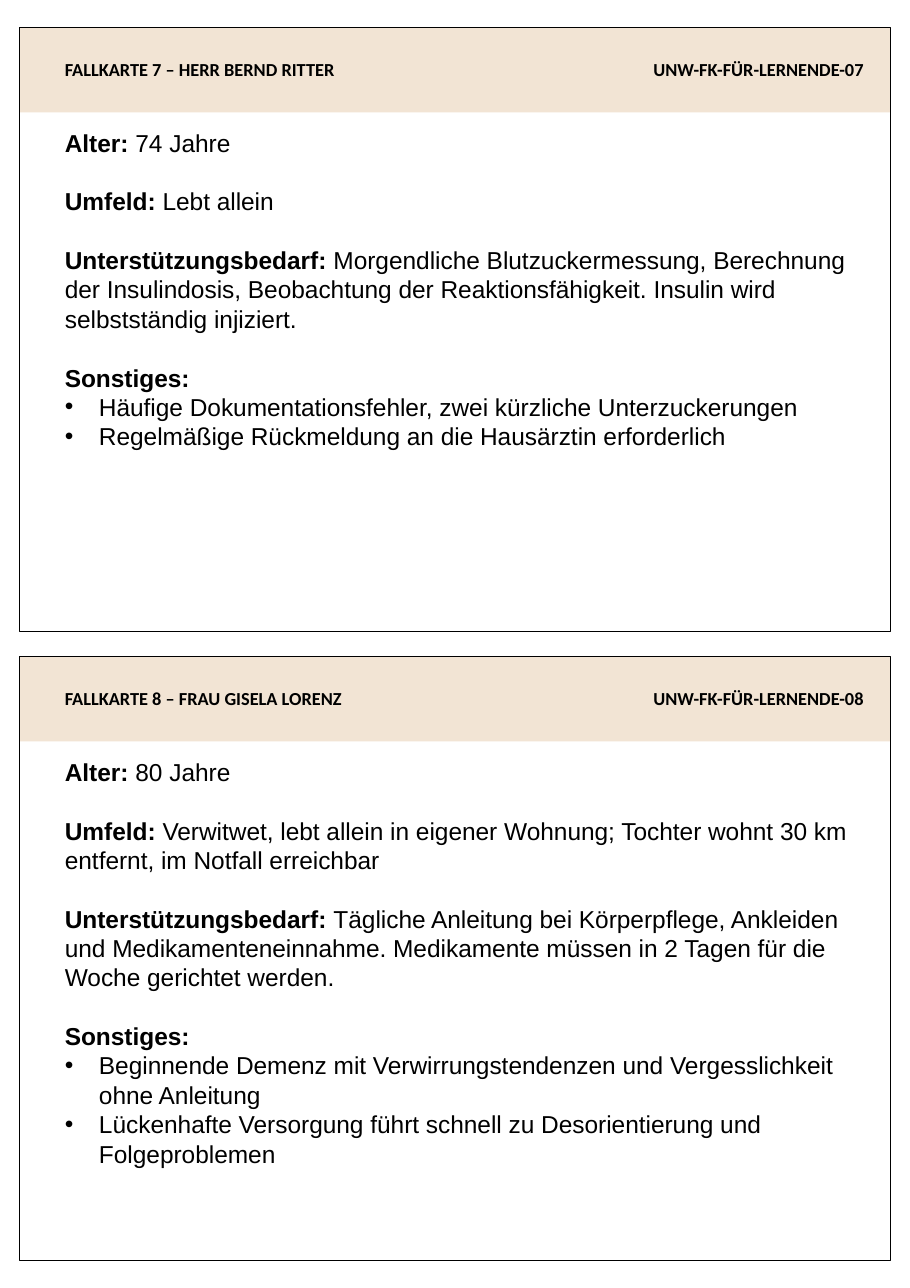
from dataclasses import dataclass

from lxml.etree import SubElement
from pptx import Presentation
from pptx.dml.color import RGBColor
from pptx.enum.shapes import MSO_SHAPE as Shape
from pptx.enum.text import MSO_AUTO_SIZE as AutoSize, PP_ALIGN as Align
from pptx.oxml.ns import qn
from pptx.util import Inches, Pt


@dataclass(frozen=True)
class Theme:
    ink: RGBColor = RGBColor(0x00, 0x00, 0x00)
    band: RGBColor = RGBColor(0xF2, 0xE4, 0xD4)
    header_font: str = "Calibri"
    header_size: Pt = Pt(12)
    body_font: str = "Arial"
    body_size: Pt = Pt(16)
    body_line: Pt = Pt(19.2)
    frame_width: Pt = Pt(0.75)


# Card layout in inches; tops inside a card count from its upper edge
FIRST_TOP, CARD_PITCH = 0.25, 5.71
CARD_LEFT, CARD_WIDTH, CARD_HEIGHT, BAND_HEIGHT = 0.18, 7.9, 5.48, 0.77
TEXT_LEFT, TEXT_WIDTH, BODY_TOP = 0.49, 7.45, 0.86
HEADER_TOP, HEADER_HEIGHT, TITLE_WIDTH = 0.23, 0.3, 4.14
CODE_LEFT, CODE_WIDTH = 4.63, 3.31
BULLET_INDENT = 0.31

CARDS = [
    {
        "title": "FALLKARTE 7 – HERR BERND RITTER",
        "code": "UNW-FK-FÜR-LERNENDE-07",
        "body_height": 3.33,
        "facts": [
            ("Alter: ", "74 Jahre"),
            ("Umfeld: ", "Lebt allein"),
            ("Unterstützungsbedarf: ",
             "Morgendliche Blutzuckermessung, Berechnung der Insulindosis, "
             "Beobachtung der Reaktionsfähigkeit. Insulin wird "
             "selbstständig injiziert."),
            ("Sonstiges:", ""),
        ],
        "notes": [
            "Häufige Dokumentationsfehler, zwei kürzliche Unterzuckerungen",
            "Regelmäßige Rückmeldung an die Hausärztin erforderlich",
        ],
    },
    {
        "title": "FALLKARTE 8 – FRAU GISELA LORENZ",
        "code": "UNW-FK-FÜR-LERNENDE-08",
        "body_height": 4.14,
        "facts": [
            ("Alter: ", "80 Jahre"),
            ("Umfeld: ",
             "Verwitwet, lebt allein in eigener Wohnung; Tochter wohnt 30 km "
             "entfernt, im Notfall erreichbar"),
            ("Unterstützungsbedarf: ",
             "Tägliche Anleitung bei Körperpflege, Ankleiden und "
             "Medikamenteneinnahme. Medikamente müssen in 2 Tagen für die "
             "Woche gerichtet werden."),
            ("Sonstiges:", ""),
        ],
        "notes": [
            "Beginnende Demenz mit Verwirrungstendenzen und Vergesslichkeit "
            "ohne Anleitung",
            "Lückenhafte Versorgung führt schnell zu Desorientierung und "
            "Folgeproblemen",
        ],
    },
]


class CardPage:
    def __init__(self, slide, theme):
        self.slide = slide
        self.theme = theme

    def rectangle(self, top, height, fill=None, line=None):
        box = self.slide.shapes.add_shape(
            Shape.RECTANGLE, Inches(CARD_LEFT), Inches(top),
            Inches(CARD_WIDTH), Inches(height))
        box.shadow.inherit = False
        if fill is None:
            box.fill.background()
        else:
            box.fill.solid()
            box.fill.fore_color.rgb = fill
        if line is None:
            box.line.fill.background()
        else:
            box.line.color.rgb = line
            box.line.width = self.theme.frame_width

    def text_frame(self, left, top, width, height):
        box = self.slide.shapes.add_textbox(
            Inches(left), Inches(top), Inches(width), Inches(height))
        frame = box.text_frame
        frame.word_wrap = True
        frame.auto_size = AutoSize.SHAPE_TO_FIT_TEXT
        return frame

    def style(self, span, name, size, bold):
        span.font.name = name
        span.font.size = size
        span.font.bold = bold
        span.font.color.rgb = self.theme.ink

    def header(self, text, left, top, width, align):
        frame = self.text_frame(left, top, width, HEADER_HEIGHT)
        frame.text = text
        para = frame.paragraphs[0]
        para.alignment = align
        self.style(para.runs[0], self.theme.header_font,
                   self.theme.header_size, True)

    def bullet(self, para):
        properties = para._p.get_or_add_pPr()
        properties.set("marL", str(Inches(BULLET_INDENT)))
        properties.set("indent", str(-Inches(BULLET_INDENT)))
        SubElement(properties, qn("a:buFont"), typeface=self.theme.body_font)
        SubElement(properties, qn("a:buChar"), char="•")

    def body(self, facts, notes, top, height):
        frame = self.text_frame(TEXT_LEFT, top, TEXT_WIDTH, height)
        rows = [(label, value, False) for label, value in facts]
        rows += [("", note, True) for note in notes]
        for index, (label, value, is_note) in enumerate(rows):
            para = frame.add_paragraph() if index else frame.paragraphs[0]
            if is_note:
                self.bullet(para)
            elif index:
                para.space_before = self.theme.body_line
            para.line_spacing = self.theme.body_line
            for text, bold in ((label, True), (value, False)):
                if text:
                    span = para.add_run()
                    span.text = text
                    self.style(span, self.theme.body_font,
                               self.theme.body_size, bold)

    def card(self, card, top):
        # Header band and frame
        self.rectangle(top, BAND_HEIGHT, fill=self.theme.band)
        self.rectangle(top, CARD_HEIGHT, line=self.theme.ink)
        # Card code and title
        self.header(card["code"], CODE_LEFT, top + HEADER_TOP,
                    CODE_WIDTH, Align.RIGHT)
        self.header(card["title"], TEXT_LEFT, top + HEADER_TOP,
                    TITLE_WIDTH, Align.LEFT)
        # Case description
        self.body(card["facts"], card["notes"], top + BODY_TOP,
                  card["body_height"])


def main():
    deck = Presentation()
    deck.slide_width = Inches(8.26)
    deck.slide_height = Inches(11.69)
    page = CardPage(deck.slides.add_slide(deck.slide_layouts[6]), Theme())
    for index, card in enumerate(CARDS):
        page.card(card, FIRST_TOP + index * CARD_PITCH)
    deck.save("out.pptx")


if __name__ == "__main__":
    main()
